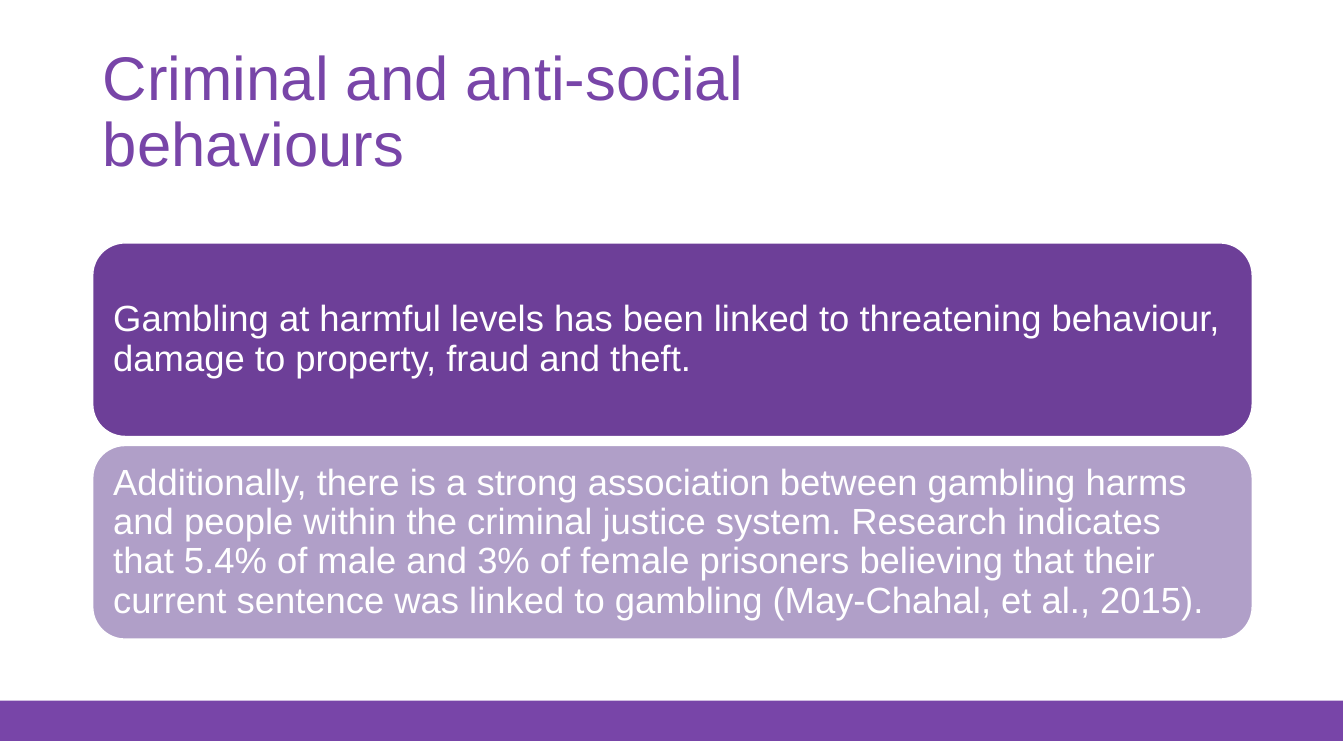
from pptx import Presentation
from pptx.dml.color import RGBColor
from pptx.enum import shapes, text
from pptx.util import Inches, Pt

# Content
TITLE = "Criminal and anti-social behaviours"
PANELS = [
    ("6D3F98", "Gambling at harmful levels has been linked to threatening "
               "behaviour, damage to property, fraud and theft."),
    ("B09FC8", "Additionally, there is a strong association between gambling "
               "harms and people within the criminal justice system. Research "
               "indicates that 5.4% of male and 3% of female prisoners believing "
               "that their current sentence was linked to gambling "
               "(May-Chahal, et al., 2015)."),
]
PURPLE, WHITE = "7845A8", "FFFFFF"
LEFT = 0.92
PANEL_TOP, PANEL_WIDTH, PANEL_HEIGHT, PANEL_STEP = 2.41, 11.5, 1.92, 2.01


def color(value):
    return RGBColor.from_string(value)


def add_block(kind, left, top, width, height, fill):
    shape = slide.shapes.add_shape(
        kind, Inches(left), Inches(top), Inches(width), Inches(height))
    shape.shadow.inherit = False
    shape.fill.solid()
    shape.fill.fore_color.rgb = color(fill)
    return shape


def write(shape, words, size, ink, inset):
    frame = shape.text_frame
    frame_format = {
        "word_wrap": True, "auto_size": text.MSO_AUTO_SIZE.NONE,
        "vertical_anchor": text.MSO_ANCHOR.MIDDLE,
        "margin_left": Inches(inset), "margin_right": Inches(inset),
    }
    for name, value in frame_format.items():
        setattr(frame, name, value)
    para = frame.paragraphs[0]
    para.text = words
    para.alignment = text.PP_ALIGN.LEFT
    para.line_spacing = 0.9
    para.font.name, para.font.size = "Arial", Pt(size)
    para.font.color.rgb = color(ink)


deck = Presentation()
deck.slide_width, deck.slide_height = Inches(13.33), Inches(7.5)
slide = deck.slides.add_slide(deck.slide_layouts[5])

# Footer band
band = add_block(shapes.MSO_SHAPE.RECTANGLE, -0.01, 6.95, 13.33, 0.4, PURPLE)
band.line.fill.background()

# Title
title = slide.shapes.title
title.left, title.top = Inches(LEFT), Inches(0.4)
title.width, title.height = Inches(8.93), Inches(1.45)
write(title, TITLE, 44, PURPLE, 0.1)

# Stacked statement panels
for row, (fill, words) in enumerate(PANELS):
    panel = add_block(shapes.MSO_SHAPE.ROUNDED_RECTANGLE, LEFT,
                      PANEL_TOP + row * PANEL_STEP, PANEL_WIDTH, PANEL_HEIGHT, fill)
    panel.line.color.rgb = color(WHITE)
    panel.line.width = Pt(1)
    write(panel, words, 26, WHITE, 0.11)

deck.save("out.pptx")
